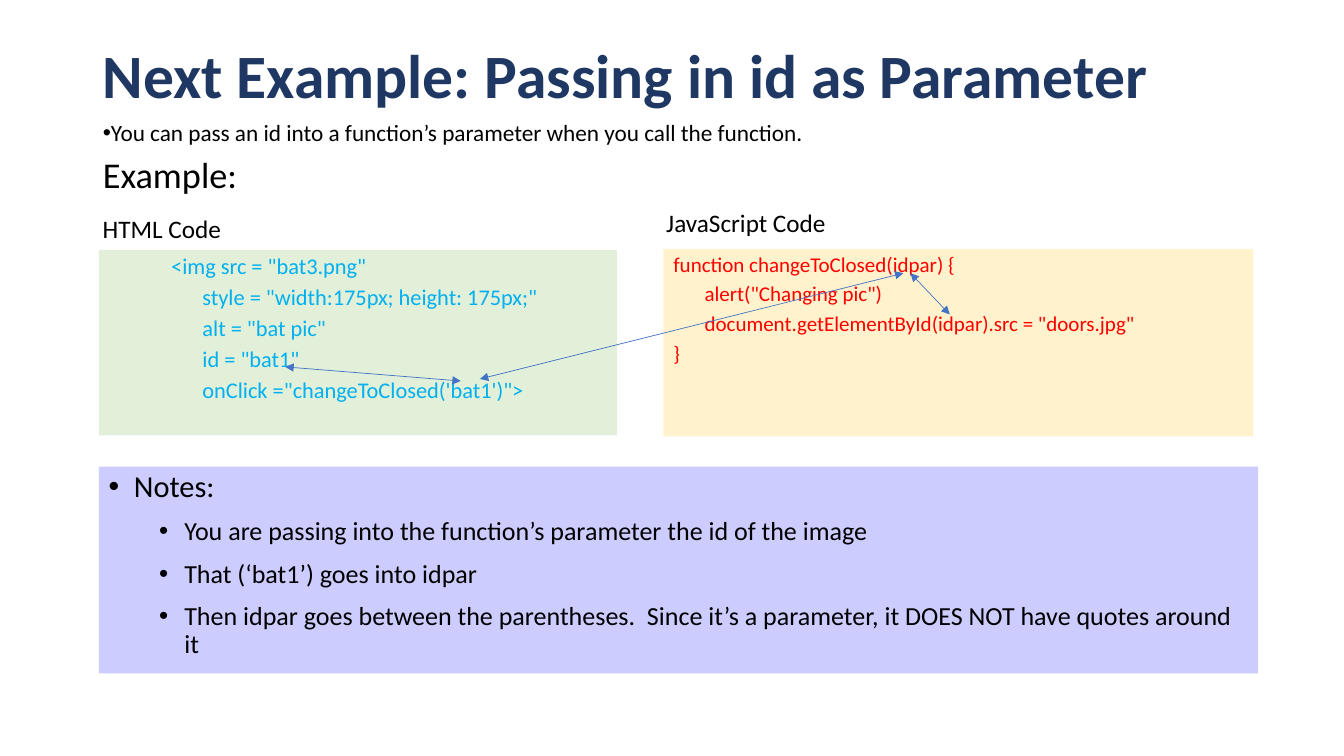
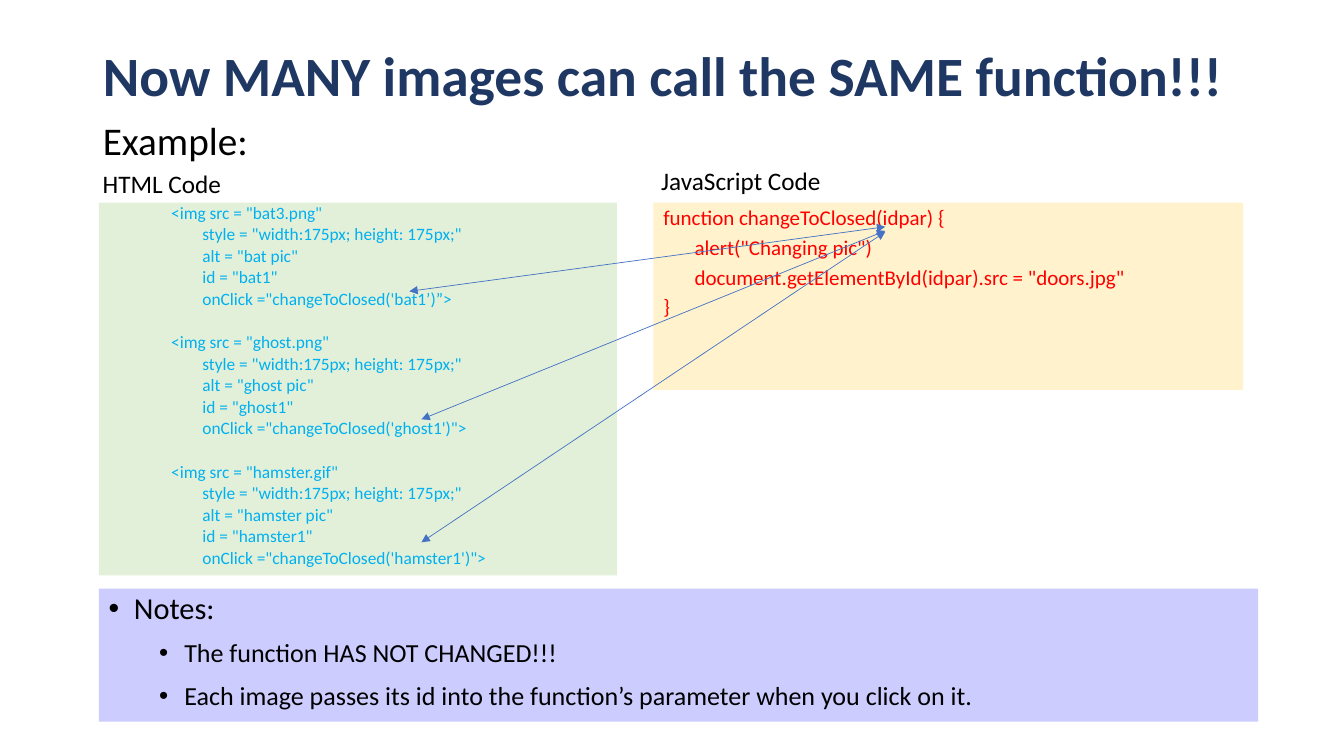
"""Build two slides on passing an image id into a JavaScript function."""
from dataclasses import dataclass

from pptx import Presentation
from pptx.dml.color import RGBColor
from pptx.enum.shapes import MSO_CONNECTOR, MSO_SHAPE
from pptx.enum.text import MSO_ANCHOR, MSO_AUTO_SIZE, PP_ALIGN
from pptx.oxml.ns import qn
from pptx.util import Inches, Pt
from lxml import etree

RECT = MSO_SHAPE.RECTANGLE
LINE = MSO_CONNECTOR.STRAIGHT
TOP, MID = MSO_ANCHOR.TOP, MSO_ANCHOR.MIDDLE
LEFT = PP_ALIGN.LEFT
FIXED = MSO_AUTO_SIZE.NONE


@dataclass(frozen=True)
class Theme:
    font: str = "Calibri"
    title: str = "1F3763"
    ink: str = "000000"
    html: str = "00B0F0"
    script: str = "FF0000"
    arrow: str = "4472C4"
    green: str = "E2F0D9"
    cream: str = "FFF2CC"
    lilac: str = "CCCCFF"
    label: float = 18
    code: float = 15
    notes: float = 21.7
    point: float = 18.6
    tab: float = 0.31
    edge: float = 0.92
    box: float = 0.98
    wide: float = 11.5


THEME = Theme()

SCRIPT = [
    (0, "function changeToClosed(idpar) {"),
    (1, 'alert("Changing pic")'),
    (1, 'document.getElementById(idpar).src = "doors.jpg"'),
    (0, "}"),
]

SLIDES = [
    {
        "title": ("Next Example: Passing in id as Parameter", 44),
        "body": [
            dict(text="You can pass an id into a function’s parameter "
                      "when you call the function.",
                 size=16.6, line=0.87, after=8, bullet=True),
            dict(text="Example:", size=25.9, line=0.7, before=5),
        ],
        "body_high": 0.9,
        "images": [("bat3.png", "bat", "'bat1')\">")],
        "html": (2.48, 1.84, 16, 0.9),
        "script": (6.58, 2.47),
        "labels": [("HTML Code", 0.92, 2.07, 1.39),
                   ("JavaScript Code", 6.51, 2.01, 1.8)],
        "notes": (4.63, 2.05, [
            "You are passing into the function’s parameter the id of the image",
            "That (‘bat1’) goes into idpar",
            "Then idpar goes between the parentheses.  Since it’s a parameter, "
            "it DOES NOT have quotes around it",
        ]),
        "arrows": [(4.76, 3.76, 8.96, 2.71), (2.83, 3.64, 4.57, 3.78),
                   (9.03, 2.71, 9.42, 3.12)],
    },
    {
        "title": ("Now MANY images can call the SAME function!!!", 39.6),
        "body": [dict(text="Example:", size=28, before=5)],
        "body_high": 0.54,
        "images": [("bat3.png", "bat", "'bat1’)”>"),
                   ("ghost.png", "ghost", "'ghost1')\">"),
                   ("hamster.gif", "hamster", "'hamster1')\">")],
        "html": (2.01, 3.7, 12.4, 0.7),
        "script": (6.48, 2.01),
        "labels": [("HTML Code", 0.92, 1.62, 1.39),
                   ("JavaScript Code", 6.46, 1.59, 1.8)],
        "notes": (5.84, 1.32, [
            "The function HAS NOT CHANGED!!!",
            "Each image passes its id into the function’s parameter "
            "when you click on it.",
        ]),
        "arrows": [(4.06, 2.89, 8.78, 2.25), (4.18, 4.16, 8.78, 2.29),
                   (4.18, 5.38, 8.78, 2.3)],
    },
]


def place(shape, left, top, width, height):
    shape.left, shape.top = Inches(left), Inches(top)
    shape.width, shape.height = Inches(width), Inches(height)


def style(para, text, size, color=THEME.ink, bold=False, line=0.9,
          before=0, after=0, left=0, hang=0, bullet=False):
    para.text = text
    para.alignment = LEFT
    para.line_spacing = line
    para.space_before, para.space_after = Pt(before), Pt(after)
    props = para._p.get_or_add_pPr()
    props.set("marL", str(Inches(left)))
    props.set("indent", str(-Inches(hang)))
    if bullet:
        etree.SubElement(props, qn("a:buFont")).set("typeface", "Arial")
        etree.SubElement(props, qn("a:buChar")).set("char", "•")
    else:
        etree.SubElement(props, qn("a:buNone"))
    for run in para.runs:
        font = run.font
        font.name, font.size, font.bold = THEME.font, Pt(size), bold
        font.color.rgb = RGBColor.from_string(color)


def write(shape, paras, anchor=TOP, wrap=True):
    frame = shape.text_frame
    frame.word_wrap, frame.auto_size = wrap, FIXED
    frame.vertical_anchor = anchor
    for i, para in enumerate(paras):
        style(frame.add_paragraph() if i else frame.paragraphs[0], **para)


def panel(slide, area, fill, paras):
    shape = slide.shapes.add_shape(RECT, *map(Inches, area))
    shape.shadow.inherit = False
    shape.fill.solid()
    shape.fill.fore_color.rgb = RGBColor.from_string(fill)
    shape.line.fill.background()
    write(shape, paras)


def notes(points):
    head = dict(text="Notes:", size=THEME.notes, left=0.25)
    rest = [dict(text=text, size=THEME.point, left=0.75) for text in points]
    return [dict(para, before=10, hang=0.25, bullet=True)
            for para in [head] + rest]


def code(lines, size, color, line=0.9):
    return [dict(text=text, size=size, color=color, line=line, before=5,
                 left=tabs * THEME.tab) for tabs, text in lines]


def markup(images, size, line):
    paras = []
    for source, name, end in images:
        block = code([
            (2, f'<img src = "{source}"'),
            (3, 'style = "width:175px; height: 175px;"'),
            (3, f'alt = "{name} pic"'),
            (3, f'id = "{name}1"'),
            (3, f'onClick ="changeToClosed({end}'),
        ], size, THEME.html, line)
        if paras:
            block[0]["before"] = 20.5
        paras += block
    return paras


def arrow(slide, ends):
    link = slide.shapes.add_connector(LINE, *map(Inches, ends))
    link.line.color.rgb = RGBColor.from_string(THEME.arrow)
    link.line.width = Pt(0.5)
    props = link.element.spPr
    stroke = props.find(qn("a:ln"))
    for end in ("a:headEnd", "a:tailEnd"):
        etree.SubElement(stroke, qn(end)).set("type", "triangle")
    etree.SubElement(props, qn("a:effectLst"))


def build(deck, data):
    slide = deck.slides.add_slide(deck.slide_layouts[1])
    title, body = slide.shapes.title, slide.placeholders[1]
    place(title, THEME.edge, 0.4, THEME.wide, 0.76)
    text, size = data["title"]
    write(title, [dict(text=text, size=size, color=THEME.title, bold=True)], MID)
    place(body, THEME.edge, 1.16, THEME.wide, data["body_high"])
    write(body, data["body"])

    top, high, points = data["notes"]
    panel(slide, (THEME.box, top, THEME.wide, high), THEME.lilac, notes(points))
    panel(slide, (*data["script"], 5.85, 1.86), THEME.cream,
          code(SCRIPT, THEME.code, THEME.script))
    top, high, size, line = data["html"]
    panel(slide, (THEME.box, top, 5.14, high), THEME.green,
          markup(data["images"], size, line))

    for text, left, top, width in data["labels"]:
        label = slide.shapes.add_textbox(*map(Inches, (left, top, width, 0.4)))
        write(label, [dict(text=text, size=THEME.label, line=1.0)], wrap=False)
    for ends in data["arrows"]:
        arrow(slide, ends)


def main():
    deck = Presentation()
    deck.slide_width, deck.slide_height = Inches(13.33), Inches(7.5)
    for data in SLIDES:
        build(deck, data)
    deck.save("out.pptx")


if __name__ == "__main__":
    main()
